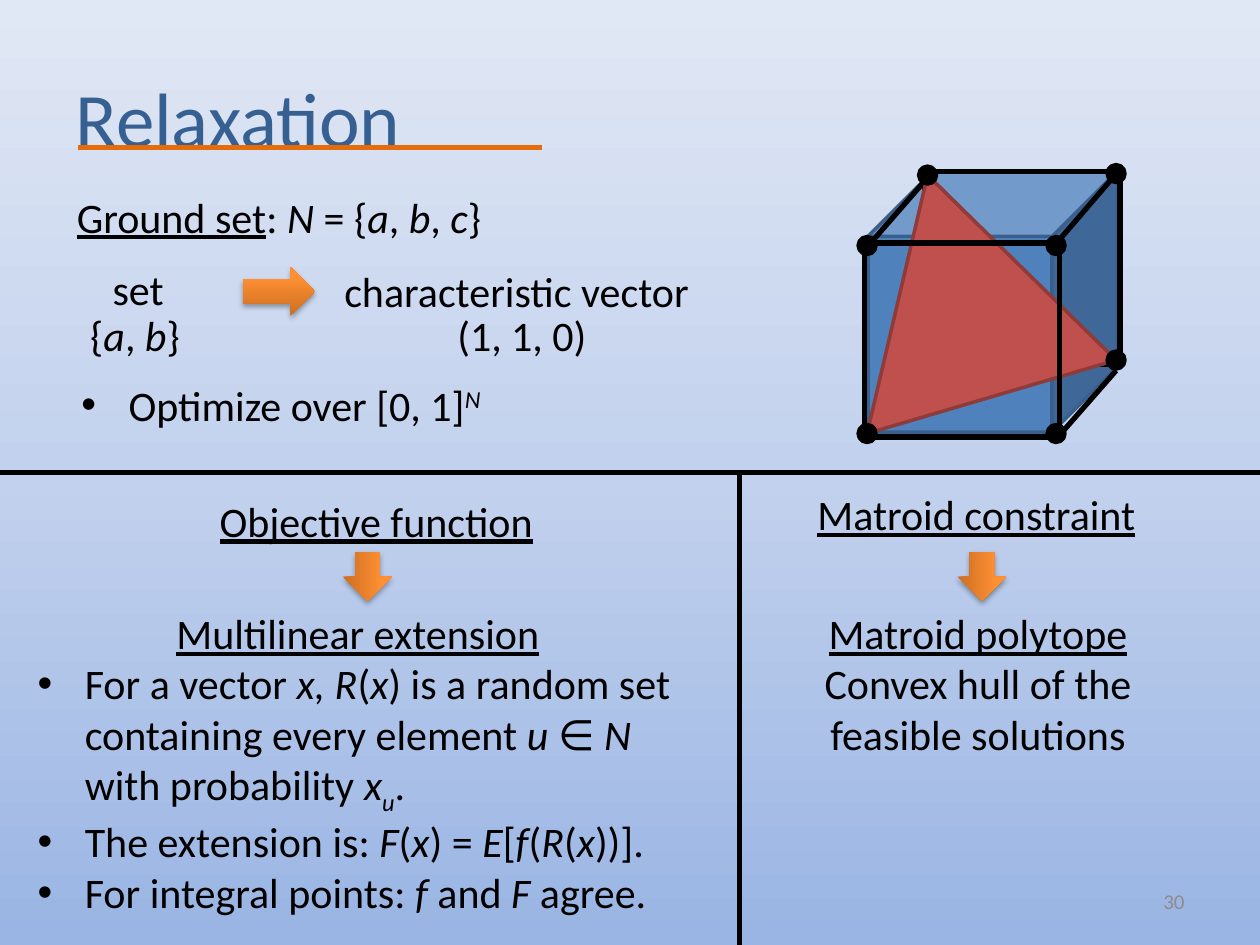
"""Build the slide on relaxing a submodular problem to the unit cube."""
import copy

import lxml.etree
import pptx
import pptx.dml.color
import pptx.enum.shapes
import pptx.enum.text
import pptx.oxml
import pptx.oxml.ns
import pptx.util
from pptx.util import Cm

ALIGN = pptx.enum.text.PP_ALIGN
SHAPE = pptx.enum.shapes.MSO_SHAPE
BLACK, ORANGE, BLUE, RED = "000000", "E46C0A", "4F81BD", "C0504D"
SKY = [(0, "9AB5E4"), (50, "C2D1ED"), (100, "E1E8F5")]
AMBER = [(0, "CC6E20"), (80, "FF9034"), (100, "FF9136")]
SHADOW = (
    '<a:effectLst %s><a:outerShdw blurRad="40000" dist="23000" dir="5400000" rotWithShape="0">'
    '<a:srgbClr val="000000"><a:alpha val="35000"/></a:srgbClr></a:outerShdw></a:effectLst>'
    % pptx.oxml.ns.nsdecls("a")
)


def rgb(value):
    """Turn a hex string into a colour."""
    return pptx.dml.color.RGBColor.from_string(value)


def write(paragraph, text, size=24, color=BLACK, underline=False, baseline=0):
    """Append text to a paragraph, with the parts between asterisks in italics."""
    for index, part in enumerate(text.split("*")):
        if not part:
            continue
        run = paragraph.add_run()
        run.text = part
        font = run.font
        font.name, font.size = "Calibri", pptx.util.Pt(size)
        font.color.rgb = rgb(color)
        if index % 2:
            font.italic = True
        if underline:
            font.underline = True
        if baseline:
            font._element.set("baseline", str(baseline * 1000))


def add_gradient(owner, fill, stops):
    """Fill with a three-stop gradient that runs upward."""
    fill.gradient()
    fill.gradient_angle = 90
    stop_list = owner.element.xpath(".//a:gsLst")[0]
    stop_list.append(copy.deepcopy(stop_list[0]))
    for stop, (position, color) in zip(fill.gradient_stops, stops):
        stop.position = position / 100
        stop.color.rgb = rgb(color)


def add_bullet(paragraph):
    """Give a paragraph a hanging round bullet."""
    properties = paragraph._p.get_or_add_pPr()
    properties.set("marL", str(Cm(0.95)))
    properties.set("indent", str(-Cm(0.95)))
    for tag, name, value in (("a:buFont", "typeface", "Arial"), ("a:buChar", "char", "•")):
        lxml.etree.SubElement(properties, pptx.oxml.ns.qn(tag)).set(name, value)


class Deck:
    """Hold the presentation, its current slide and the shared style."""

    def __init__(self):
        """Start a 4:3 deck with one title-only slide."""
        self.presentation = pptx.Presentation()
        self.presentation.slide_width = Cm(25.4)
        self.presentation.slide_height = Cm(19.05)
        self.slide = self.presentation.slides.add_slide(self.presentation.slide_layouts[5])
        self.shapes = self.slide.shapes
        add_gradient(self.slide, self.slide.background.fill, SKY)

    def title(self, text, left, top, width, height):
        """Place and fill the title."""
        heading = self.shapes.title
        heading.left, heading.top, heading.width, heading.height = map(Cm, (left, top, width, height))
        heading.text_frame.vertical_anchor = pptx.enum.text.MSO_ANCHOR.MIDDLE
        paragraph = heading.text_frame.paragraphs[0]
        paragraph.alignment = ALIGN.LEFT
        write(paragraph, text, size=44, color="376092")

    def text(self, runs, left, top, width, height=1.27, align=ALIGN.CENTER, wrap=True,
             bullets=(), bulleted=False):
        """Add a text box with a lead paragraph and optional bullets below it."""
        frame = self.shapes.add_textbox(*map(Cm, (left, top, width, height))).text_frame
        frame.word_wrap = wrap
        frame.auto_size = pptx.enum.text.MSO_AUTO_SIZE.SHAPE_TO_FIT_TEXT
        lead = frame.paragraphs[0]
        lead.alignment = align
        if bulleted:
            add_bullet(lead)
        for text, style in runs:
            write(lead, text, **style)
        for item in bullets:
            paragraph = frame.add_paragraph()
            add_bullet(paragraph)
            for text, style in item:
                write(paragraph, text, **style)
        return frame

    def line(self, x1, y1, x2, y2, color=BLACK):
        """Draw a straight 3-point line without a shadow."""
        rule = self.shapes.add_connector(
            pptx.enum.shapes.MSO_CONNECTOR.STRAIGHT, *map(Cm, (x1, y1, x2, y2)))
        rule.line.color.rgb = rgb(color)
        rule.line.width = pptx.util.Pt(3)
        lxml.etree.SubElement(rule._element.spPr, pptx.oxml.ns.qn("a:effectLst"))

    def paint(self, shape, fill, outline):
        """Give a shape a flat fill and a 2-point outline."""
        shape.shadow.inherit = False
        shape.fill.solid()
        shape.fill.fore_color.rgb = rgb(fill)
        shape.line.color.rgb = rgb(outline)
        shape.line.width = pptx.util.Pt(2)

    def cube(self, left, top, width, height):
        """Draw the solid cube."""
        solid = self.shapes.add_shape(SHAPE.CUBE, *map(Cm, (left, top, width, height)))
        solid.adjustments[0] = 0.262
        self.paint(solid, BLUE, "3A5F8C")

    def vertex(self, x, y, size=0.36):
        """Mark a cube corner with a dot centred on it."""
        dot = self.shapes.add_shape(
            SHAPE.OVAL, *map(Cm, (x - size / 2, y - size / 2, size, size)))
        self.paint(dot, BLACK, BLACK)

    def polygon(self, corners):
        """Draw the closed face through the given corners."""
        points = [(Cm(x), Cm(y)) for x, y in corners]
        builder = self.shapes.build_freeform(*points[0])
        builder.add_line_segments(points[1:], close=True)
        self.paint(builder.convert_to_shape(), RED, "8E3B39")

    def arrow(self, left, top, width=0.99, height=0.99, rotation=90):
        """Draw a shaded orange block arrow."""
        step = self.shapes.add_shape(SHAPE.RIGHT_ARROW, *map(Cm, (left, top, width, height)))
        step.rotation = rotation
        add_gradient(step, step.fill, AMBER)
        step.line.fill.background()
        step._element.spPr.append(pptx.oxml.parse_xml(SHADOW))


def main():
    """Compose the slide and save it."""
    deck = Deck()
    plain, under = {}, {"underline": True}

    deck.line(1.57, 2.97, 10.92, 2.97, ORANGE)
    deck.cube(17.5, 3.45, 5.03, 5.26)
    back_left, back_right, back_top, back_bottom = 18.64, 22.58, 3.45, 7.34
    front_left, front_right, front_top, front_bottom = 17.42, 21.36, 4.9, 8.81
    for edge in (
        (back_left, back_top, back_left, back_bottom),
        (22.45, 3.56, 21.23, 4.98),
        (back_right, 3.33, back_right, 7.21),
        (18.77, 3.5, 17.55, 4.9),
        (back_left, back_top, back_right, back_top),
        (back_left, back_bottom, back_right, back_bottom),
        (front_left, front_top, front_left, front_bottom),
        (front_left, front_bottom, front_right, front_bottom),
        (18.77, 7.29, 17.55, 8.69),
        (22.5, 7.47, 21.23, 8.92),
    ):
        deck.line(*edge)

    deck.title("Relaxation", 1.27, 0.76, 22.86, 3.18)
    number = deck.text([("30", {"size": 12, "color": "8C8C8C"})],
                       18.21, 17.65, 5.92, 1.02, align=ALIGN.RIGHT)
    number.auto_size = pptx.enum.text.MSO_AUTO_SIZE.NONE
    number.vertical_anchor = pptx.enum.text.MSO_ANCHOR.MIDDLE

    deck.text([("Matroid constraint", under)], 15.85, 9.73, 7.67)
    deck.text([("Matroid polytope ", under), ("Convex hull of the feasible solutions", plain)],
              15.93, 12.12, 7.57, 3.33)
    deck.text([("set", plain)], 0.51, 5.18, 4.55)
    deck.arrow(4.9, 5.38, width=1.45, rotation=0)
    deck.text([("characteristic vector", plain)], 6.53, 5.23, 7.77)
    deck.text([("Objective function", under)], 4.09, 9.86, 6.99)
    deck.arrow(6.91, 11.13)
    deck.text([("Multilinear extension", under)], 0.51, 12.12, 13.41, 6.4, bullets=[
        [("For a vector *x, R*(*x*) is a random set containing every element "
          "*u *∈ *N* with probability *x*", plain), ("*u*", {"baseline": -25}), (".", plain)],
        [("The extension is: *F*(*x*) = *E*[*f*(*R*(*x*))].", plain)],
        [("For integral points: *f* and *F* agree.", plain)],
    ])

    for corner in ((22.5, 3.5), (17.48, 4.95), (21.29, 4.95), (21.29, 8.74)):
        deck.vertex(*corner)
    deck.text([("Ground set", under), (": *N* = {*a*, *b*, *c*}", plain)],
              1.3, 3.73, 8.69, align=ALIGN.LEFT, wrap=False)
    deck.text([("{*a*, *b*}", plain)], 1.57, 6.12, 2.34, align=ALIGN.LEFT, wrap=False)
    deck.text([("(1, 1, 0)", plain)], 8.97, 6.12, 3.12, align=ALIGN.LEFT, wrap=False)
    deck.vertex(18.7, 7.26)
    deck.text([("Optimize over [0, 1]", plain), ("*N*", {"baseline": 30})],
              1.22, 7.52, 8.89, bulleted=True)

    deck.line(0, 9.53, 25.4, 9.53)
    deck.arrow(19.3, 11.13)
    deck.line(14.91, 9.53, 14.91, 19.05)

    feasible = [(18.7, 3.53), (22.5, 7.26), (17.48, 8.74)]
    deck.polygon(feasible)
    for corner in feasible:
        deck.vertex(*corner)
    deck.line(front_right, 4.78, front_right, 8.69)
    deck.line(front_left, front_top, front_right, front_top)

    deck.presentation.save("out.pptx")


if __name__ == "__main__":
    main()
